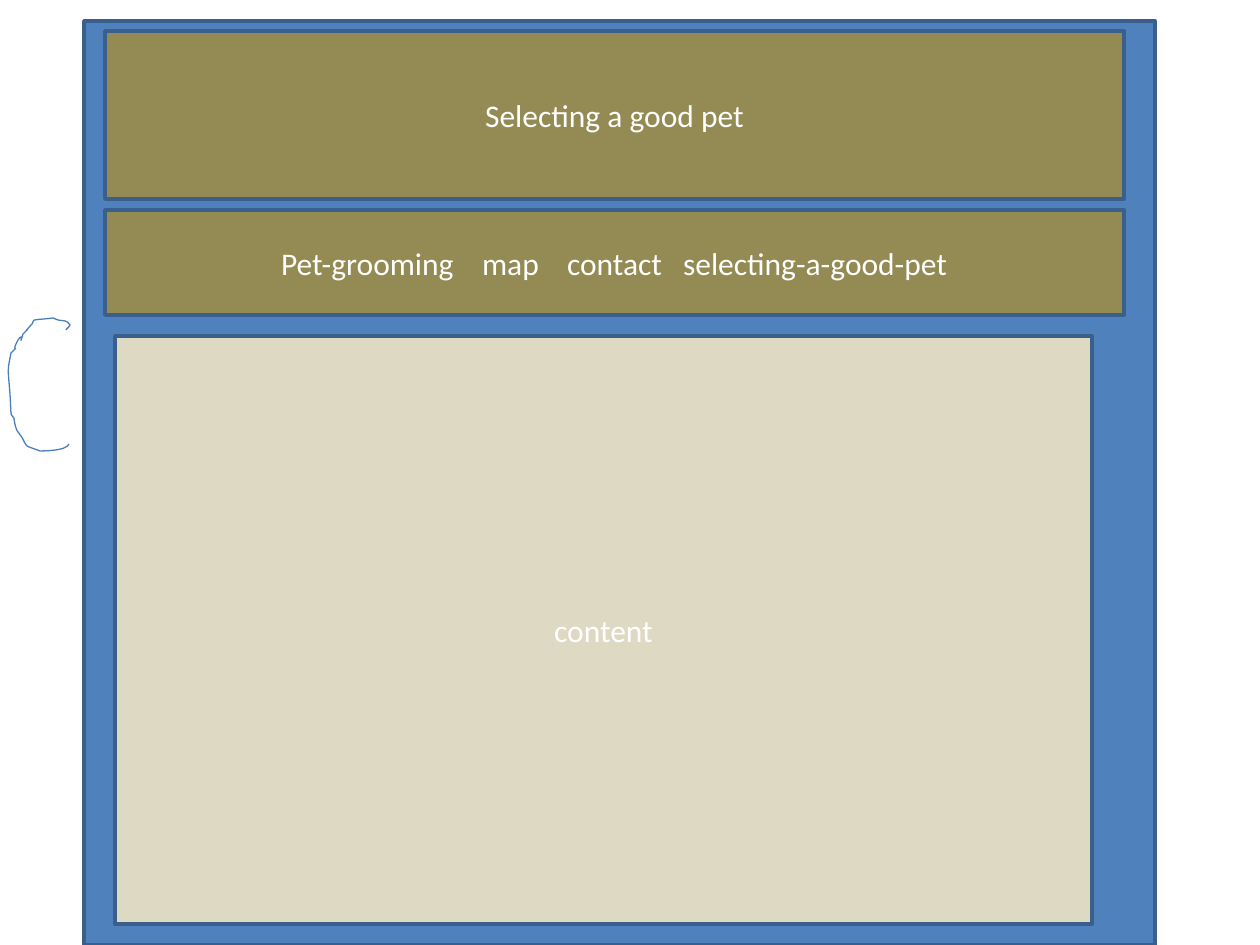
from dataclasses import dataclass

from lxml.etree import SubElement
from pptx import Presentation
from pptx.dml.color import RGBColor
from pptx.enum.shapes import MSO_SHAPE
from pptx.enum.text import MSO_ANCHOR, PP_ALIGN
from pptx.oxml.ns import qn
from pptx.util import Pt

PX = 914400 // 126  # EMU per pixel
SLIDE_W, SLIDE_H = 1260, 945


@dataclass(frozen=True)
class Theme:
    page: str = "4F81BD"
    banner: str = "948A54"
    content: str = "DDD9C3"
    border: str = "3A5F8C"
    ink: str = "4B7EBC"
    text: str = "FFFFFF"
    font: str = "Calibri"
    size: float = 18
    border_width: float = 2
    ink_width: float = 0.75


THEME = Theme()

# left, top, width, height, fill, text
PANELS = [
    (84, 21, 1071, 924, THEME.page, ""),
    (105, 31, 1019, 168, THEME.banner, "Selecting a good pet"),
    (105, 210, 1019, 105, THEME.banner,
     "Pet-grooming\tmap\tcontact\tselecting-a-good-pet"),
    (115, 336, 977, 588, THEME.content, "content"),
]
MENU_STARTS = [281, 482, 567, 683]  # left edge of each menu word

# Pen stroke: a pair is a straight line, six numbers are a Bezier curve
STROKE_START = (66, 330)
STROKE = [
    (67, 328, 72, 325, 69, 324), (67, 320, 62, 321, 58, 320), (53, 318),
    (47, 319, 40, 319, 35, 320), (33, 320, 33, 323, 32, 324),
    (21, 336, 33, 324, 23, 334), (18, 350, 25, 330, 18, 340),
    (10, 355, 21, 343, 11, 353), (6, 378, 9, 365, 11, 413),
    (11, 415, 13, 417, 14, 418), (14, 421, 16, 430, 18, 432),
    (19, 433, 20, 435, 21, 436), (24, 440, 25, 446, 29, 447), (40, 451),
    (42, 451, 60, 451, 66, 447), (68, 446, 68, 445, 69, 444),
]
CURVE_STEPS = 8


def rgb(color):
    return RGBColor.from_string(color)


def set_line(sp, color, width):
    sp.shadow.inherit = False
    sp.line.color.rgb = rgb(color)
    sp.line.width = Pt(width)


def set_menu_tabs(tf, p, left):
    """Start the first word at the inset and the others at tab stops."""
    first, *others = MENU_STARTS
    tf.margin_left = (first - left) * PX
    p.alignment = PP_ALIGN.LEFT
    tabs = SubElement(p._p.get_or_add_pPr(), qn("a:tabLst"))
    for start in others:
        SubElement(tabs, qn("a:tab"), pos=str((start - first) * PX), algn="l")


def add_panel(shapes, left, top, width, height, fill, text):
    sp = shapes.add_shape(MSO_SHAPE.RECTANGLE,
                          *(v * PX for v in (left, top, width, height)))
    sp.fill.solid()
    sp.fill.fore_color.rgb = rgb(fill)
    set_line(sp, THEME.border, THEME.border_width)
    if not text:
        return
    tf = sp.text_frame
    tf.word_wrap = True
    tf.vertical_anchor = MSO_ANCHOR.MIDDLE
    p = tf.paragraphs[0]
    p.alignment = PP_ALIGN.CENTER
    if "\t" in text:
        set_menu_tabs(tf, p, left)
    p.add_run().text = text
    p.font.name = THEME.font
    p.font.size = Pt(THEME.size)
    p.font.color.rgb = rgb(THEME.text)


def flatten(start, segments):
    """Turn lines and Bezier curves into a list of points."""
    points = [start]
    for *controls, x, y in segments:
        if not controls:
            points.append((x, y))
            continue
        x0, y0 = points[-1]
        x1, y1, x2, y2 = controls
        for step in range(1, CURVE_STEPS + 1):
            t = step / CURVE_STEPS
            u = 1 - t
            weights = (u**3, 3 * u * u * t, 3 * u * t * t, t**3)
            points.append(tuple(
                sum(w * v for w, v in zip(weights, axis))
                for axis in ((x0, x1, x2, x), (y0, y1, y2, y))))
    return points


def add_stroke(shapes):
    first, *others = flatten(STROKE_START, STROKE)
    builder = shapes.build_freeform(
        round(first[0] * PX), round(first[1] * PX))
    builder.add_line_segments(
        [(round(x * PX), round(y * PX)) for x, y in others], close=False)
    sp = builder.convert_to_shape()
    sp.fill.background()
    set_line(sp, THEME.ink, THEME.ink_width)


def main():
    prs = Presentation()
    prs.slide_width, prs.slide_height = SLIDE_W * PX, SLIDE_H * PX
    s = prs.slides.add_slide(prs.slide_layouts[6])
    for panel in PANELS:
        add_panel(s.shapes, *panel)
    add_stroke(s.shapes)
    prs.save("out.pptx")


if __name__ == "__main__":
    main()
